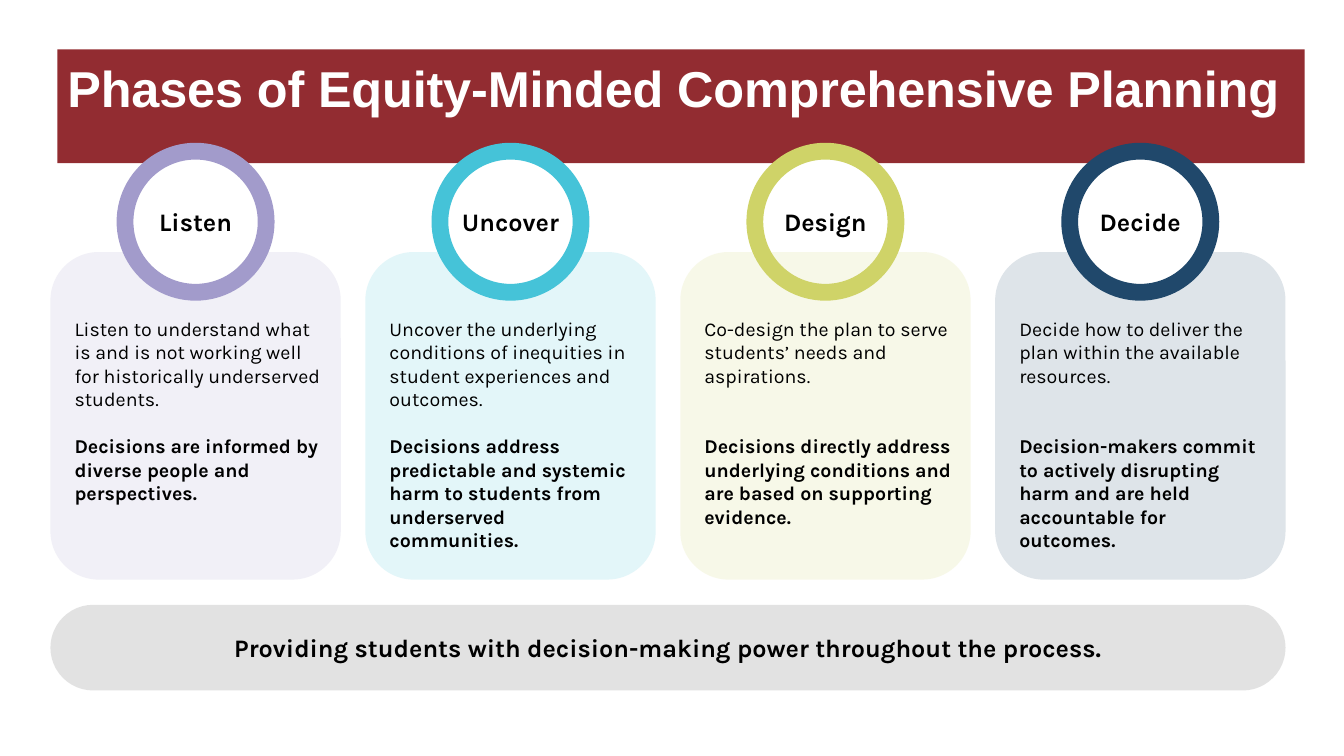
from lxml.etree import SubElement
from pptx import Presentation
from pptx.dml.color import RGBColor
from pptx.enum.shapes import MSO_SHAPE as Shape
from pptx.enum.text import MSO_ANCHOR as Anchor, PP_ALIGN as Align
from pptx.oxml.ns import qn
from pptx.util import Pt

PX = 9144  # 100 px to the inch
COLORS = {
    "banner": "922C31", "white": "FFFFFF", "ink": "000000", "footer": "D9D9D9",
    "listen": "A29BCB", "listen_card": "F1F0F7",
    "uncover": "45C3D8", "uncover_card": "E3F6F9",
    "design": "CFD368", "design_card": "CFD368",
    "decide": "20486B", "decide_card": "DEE4E9",
}
LINE_PT = 16.7  # height of one line of card text

# name, card opacity in percent, summary, empty lines after it, decisions
PHASES = [
    ("Listen", 100,
     "Listen to understand what is and is not working well for historically "
     "underserved students.", 1,
     "Decisions are informed by diverse people and perspectives."),
    ("Uncover", 100,
     "Uncover the underlying conditions of inequities in student experiences "
     "and outcomes.", 1,
     "Decisions address predictable and systemic harm to students from "
     "underserved communities."),
    ("Design", 15,
     "Co-design the plan to serve students’ needs and aspirations.", 2,
     "Decisions directly address underlying conditions and are based on "
     "supporting evidence."),
    ("Decide", 100,
     "Decide how to deliver the plan within the available resources.", 2,
     "Decision-makers commit to actively disrupting harm and are held "
     "accountable for outcomes."),
]


def rgb(name):
    return RGBColor.from_string(COLORS[name])


def add_panel(slide, kind, box, fill, margins, anchor, opacity=100):
    """Add a filled, unoutlined shape; margins run left, top, right, bottom."""
    panel = slide.shapes.add_shape(kind, *(round(n * PX) for n in box))
    panel.shadow.inherit = False
    panel.fill.solid()
    panel.fill.fore_color.rgb = rgb(fill)
    if opacity < 100:
        color = panel.fill._xPr.find(".//" + qn("a:srgbClr"))
        SubElement(color, qn("a:alpha"), val=str(opacity * 1000))
    panel.line.fill.background()
    frame = panel.text_frame
    frame.word_wrap = True
    frame.vertical_anchor = anchor
    (frame.margin_left, frame.margin_top,
     frame.margin_right, frame.margin_bottom) = (n * PX for n in margins)
    return panel


def write(paragraph, text, size, bold=True, align=Align.LEFT,
          font="Karla", color="ink"):
    paragraph.text = text
    paragraph.alignment = align
    paragraph.font.name = font
    paragraph.font.size = Pt(size)
    paragraph.font.bold = bold
    paragraph.font.color.rgb = rgb(color)


def add_banner(slide, box):
    banner = add_panel(slide, Shape.RECTANGLE, box, "banner",
                       (10, 8, 0, 0), Anchor.TOP)
    title = banner.text_frame.paragraphs[0]
    write(title, "Phases of Equity-Minded Comprehensive Planning", 36,
          font="Arial", color="white")
    title.runs[0]._r.get_or_add_rPr().set("spc", "-10")


def add_ring(slide, box, name):
    ring = add_panel(slide, Shape.OVAL, box, "white", (0, 5, 0, 5), Anchor.MIDDLE)
    ring.line.color.rgb = rgb(name.lower())
    ring.line.width = Pt(12)
    write(ring.text_frame.paragraphs[0], name, 18, align=Align.CENTER)


def add_card(slide, box, name, opacity, summary, empty_lines, decisions):
    card = add_panel(slide, Shape.ROUNDED_RECTANGLE, box, f"{name.lower()}_card",
                     (10, 50, 5, 5), Anchor.TOP, opacity)
    write(card.text_frame.paragraphs[0], summary, 14, bold=False)
    outcome = card.text_frame.add_paragraph()
    write(outcome, decisions, 14)
    outcome.space_before = Pt(LINE_PT * empty_lines)


def add_phase(slide, box, phase):
    """Place a ring at the top centre of the box, overlapping a card below."""
    left, top, width, height = box
    ring_size, card_drop = 140, 100
    ring_box = (left + (width - ring_size) / 2, top, ring_size, ring_size)
    card_box = (left, top + card_drop, width, height - card_drop)
    name, opacity = phase[:2]
    see_through = opacity < 100  # a translucent card lies over its ring
    if see_through:
        add_ring(slide, ring_box, name)
    add_card(slide, card_box, *phase)
    if not see_through:
        add_ring(slide, ring_box, name)


def add_phases(slide, box, phase_width):
    left, top, width, height = box
    pitch = (width - phase_width) / (len(PHASES) - 1)
    for index, phase in enumerate(PHASES):
        add_phase(slide, (left + index * pitch, top, phase_width, height), phase)


def add_footer(slide, box):
    footer = add_panel(slide, Shape.ROUNDED_RECTANGLE, box, "footer",
                       (10, 5, 10, 5), Anchor.MIDDLE, opacity=75)
    footer.adjustments[0] = 0.5
    write(footer.text_frame.paragraphs[0],
          "Providing students with decision-making power throughout the process.",
          18, align=Align.CENTER)


def main():
    deck = Presentation()
    deck.slide_width, deck.slide_height = 1333 * PX, 750 * PX
    slide = deck.slides.add_slide(deck.slide_layouts[6])
    add_banner(slide, (57, 49, 1237, 113))
    add_phases(slide, (50, 150, 1225, 425), phase_width=288)
    add_footer(slide, (50, 600, 1225, 85))
    deck.save("out.pptx")


if __name__ == "__main__":
    main()
